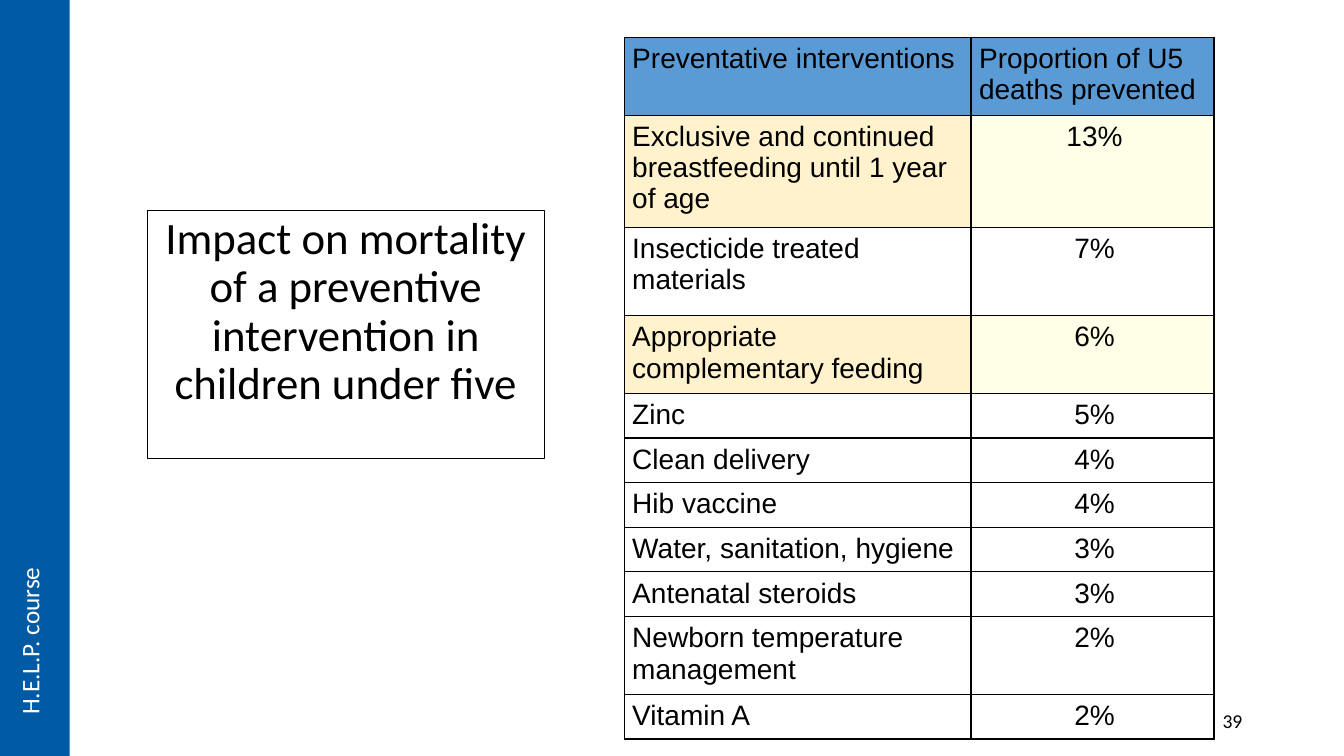
import pptx
import pptx.util
import pptx.dml.color
import pptx.enum.shapes
import pptx.enum.text
import pptx.oxml.ns
from lxml import etree

RGBColor = pptx.dml.color.RGBColor
Inches, Pt = pptx.util.Inches, pptx.util.Pt
ALIGN = pptx.enum.text.PP_ALIGN
ANCHOR = pptx.enum.text.MSO_ANCHOR
AUTO_SIZE = pptx.enum.text.MSO_AUTO_SIZE
qn = pptx.oxml.ns.qn

BLACK = RGBColor(0x00, 0x00, 0x00)
WHITE = RGBColor(0xFF, 0xFF, 0xFF)
SIDEBAR_BLUE = RGBColor(0x00, 0x5B, 0xA4)
HEADER_BLUE = RGBColor(0x5B, 0x9B, 0xD5)
FEEDING_ORANGE = RGBColor(0xFF, 0xF2, 0xCC)
FEEDING_YELLOW = RGBColor(0xFF, 0xFF, 0xE7)

SLIDE_WIDTH, SLIDE_HEIGHT = Inches(13.33), Inches(7.5)

# Row heights in percent of the slide height
ONE_LINE, TWO_LINES, TWO_LINES_LOOSE, THREE_LINES = 5.91, 10.3, 11.65, 14.85
COLUMN_WIDTHS = (25.81, 18.08)
HEADER_FILLS = (HEADER_BLUE, HEADER_BLUE)
FEEDING_FILLS = (FEEDING_ORANGE, FEEDING_YELLOW)
PLAIN_FILLS = (WHITE, WHITE)

INTERVENTIONS = [
    ("Preventative interventions", "Proportion of U5 deaths prevented", TWO_LINES, HEADER_FILLS),
    ("Exclusive and continued breastfeeding until 1 year of age", "13%", THREE_LINES, FEEDING_FILLS),
    ("Insecticide treated materials", "7%", TWO_LINES_LOOSE, PLAIN_FILLS),
    ("Appropriate complementary feeding", "6%", TWO_LINES, FEEDING_FILLS),
    ("Zinc", "5%", ONE_LINE, PLAIN_FILLS),
    ("Clean delivery", "4%", ONE_LINE, PLAIN_FILLS),
    ("Hib vaccine", "4%", ONE_LINE, PLAIN_FILLS),
    ("Water, sanitation, hygiene", "3%", ONE_LINE, PLAIN_FILLS),
    ("Antenatal steroids", "3%", ONE_LINE, PLAIN_FILLS),
    ("Newborn temperature management", "2%", TWO_LINES, PLAIN_FILLS),
    ("Vitamin A", "2%", ONE_LINE, PLAIN_FILLS),
]


def across(percent):
    return round(SLIDE_WIDTH * percent / 100)


def down(percent):
    return round(SLIDE_HEIGHT * percent / 100)


def area(left, top, width, height):
    return across(left), down(top), across(width), down(height)


def write(frame, text, font_name, size, color, align=ALIGN.LEFT):
    frame.text = text
    paragraph = frame.paragraphs[0]
    paragraph.alignment = align
    font = paragraph.font
    font.name, font.size, font.bold = font_name, Pt(size), False
    font.color.rgb = color
    return paragraph


def add_title(slide, text):
    title = slide.shapes.title
    title.left, title.top, title.width, title.height = area(10.95, 27.87, 29.56, 32.8)
    title.line.color.rgb = BLACK
    title.line.width = Pt(0.75)
    frame = title.text_frame
    frame.word_wrap = True
    frame.auto_size = AUTO_SIZE.NONE
    frame.vertical_anchor = ANCHOR.TOP
    write(frame, text, "Calibri", 32, BLACK, ALIGN.CENTER).line_spacing = 0.9


def add_label(slide, box, text, size, color, align=ALIGN.LEFT):
    frame = slide.shapes.add_textbox(*box).text_frame
    frame.word_wrap = True
    write(frame, text, "Calibri", size, color, align)
    return frame


def add_borders(cell):
    properties = cell._tc.get_or_add_tcPr()
    for side in ("a:lnL", "a:lnR", "a:lnT", "a:lnB"):
        border = etree.SubElement(properties, qn(side), w=str(Pt(1)))
        fill = etree.SubElement(border, qn("a:solidFill"))
        etree.SubElement(fill, qn("a:srgbClr"), val=str(BLACK))


def format_cell(cell, text, fill, align):
    cell.margin_left = cell.margin_right = Inches(0.04)
    cell.margin_top = cell.margin_bottom = Inches(0.06)
    paragraph = write(cell.text_frame, text, "Arial", 20, BLACK, align)
    indent = paragraph._p.get_or_add_pPr()
    indent.set("marL", str(Inches(0.04)))
    indent.set("indent", "0")
    add_borders(cell)
    cell.fill.solid()
    cell.fill.fore_color.rgb = fill


def add_interventions_table(slide):
    total_height = sum(height for _, _, height, _ in INTERVENTIONS)
    box = area(46.44, 4.93, sum(COLUMN_WIDTHS), total_height)
    table = slide.shapes.add_table(len(INTERVENTIONS), len(COLUMN_WIDTHS), *box).table
    for column, width in zip(table.columns, COLUMN_WIDTHS):
        column.width = across(width)
    for index, (intervention, proportion, height, fills) in enumerate(INTERVENTIONS):
        table.rows[index].height = down(height)
        proportion_align = ALIGN.LEFT if index == 0 else ALIGN.CENTER
        format_cell(table.cell(index, 0), intervention, fills[0], ALIGN.LEFT)
        format_cell(table.cell(index, 1), proportion, fills[1], proportion_align)


def add_sidebar(slide, course):
    band = slide.shapes.add_shape(
        pptx.enum.shapes.MSO_SHAPE.RECTANGLE, *area(0, 0, 5.18, 100))
    band.shadow.inherit = False
    band.fill.solid()
    band.fill.fore_color.rgb = SIDEBAR_BLUE
    band.line.fill.background()
    course_frame = add_label(slide, area(0.68, 74.8, 3.75, 21.07), course, 18, WHITE)
    course_frame.word_wrap = False
    course_frame.auto_size = AUTO_SIZE.SHAPE_TO_FIT_TEXT
    course_frame._txBody.bodyPr.set("vert", "vert270")


def main():
    deck = pptx.Presentation()
    deck.slide_width, deck.slide_height = SLIDE_WIDTH, SLIDE_HEIGHT
    slide = deck.slides.add_slide(deck.slide_layouts.get_by_name("Title Only"))

    # Title and table
    add_title(slide, "Impact on mortality of a preventive intervention in children under five")
    add_interventions_table(slide)

    # Page number and course band
    page_number = add_label(slide, area(70.67, 92.67, 22.51, 5.33), "39", 14, BLACK, ALIGN.RIGHT)
    page_number.vertical_anchor = ANCHOR.MIDDLE
    add_sidebar(slide, "H.E.L.P. course")

    deck.save("out.pptx")


if __name__ == "__main__":
    main()
